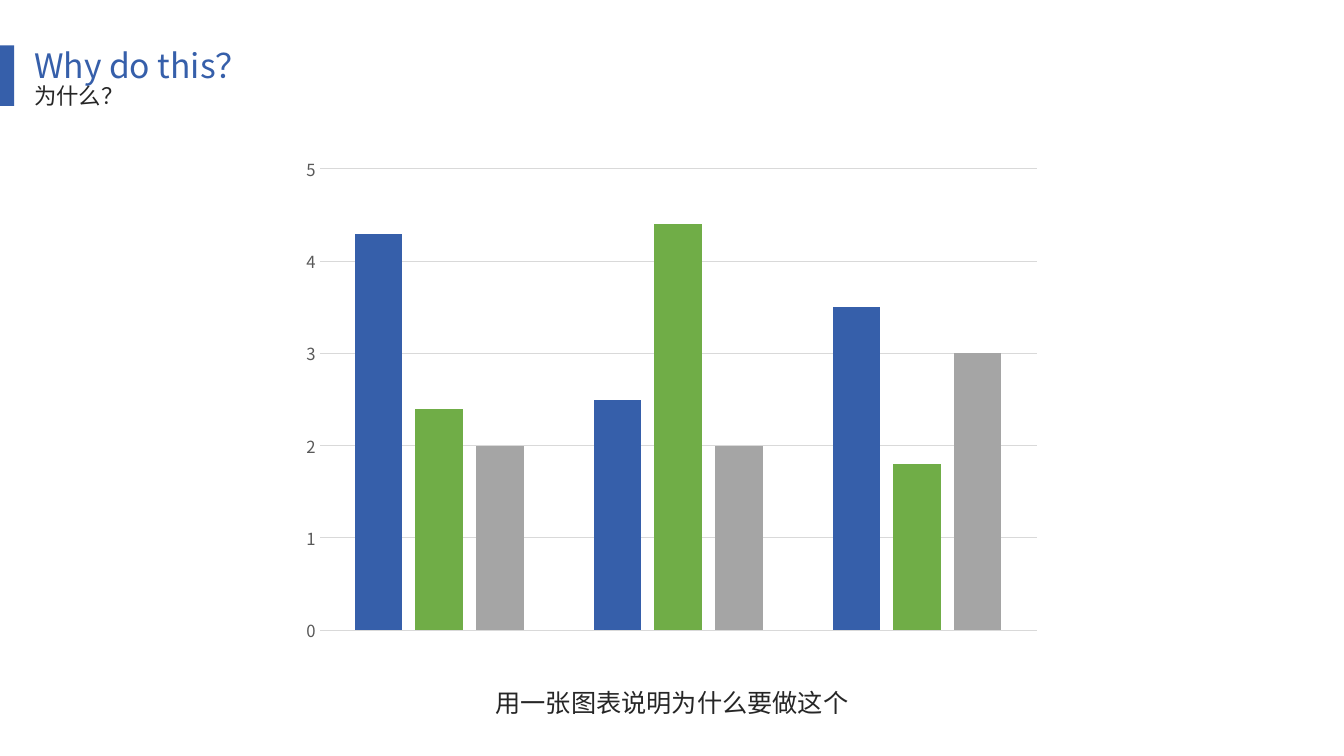
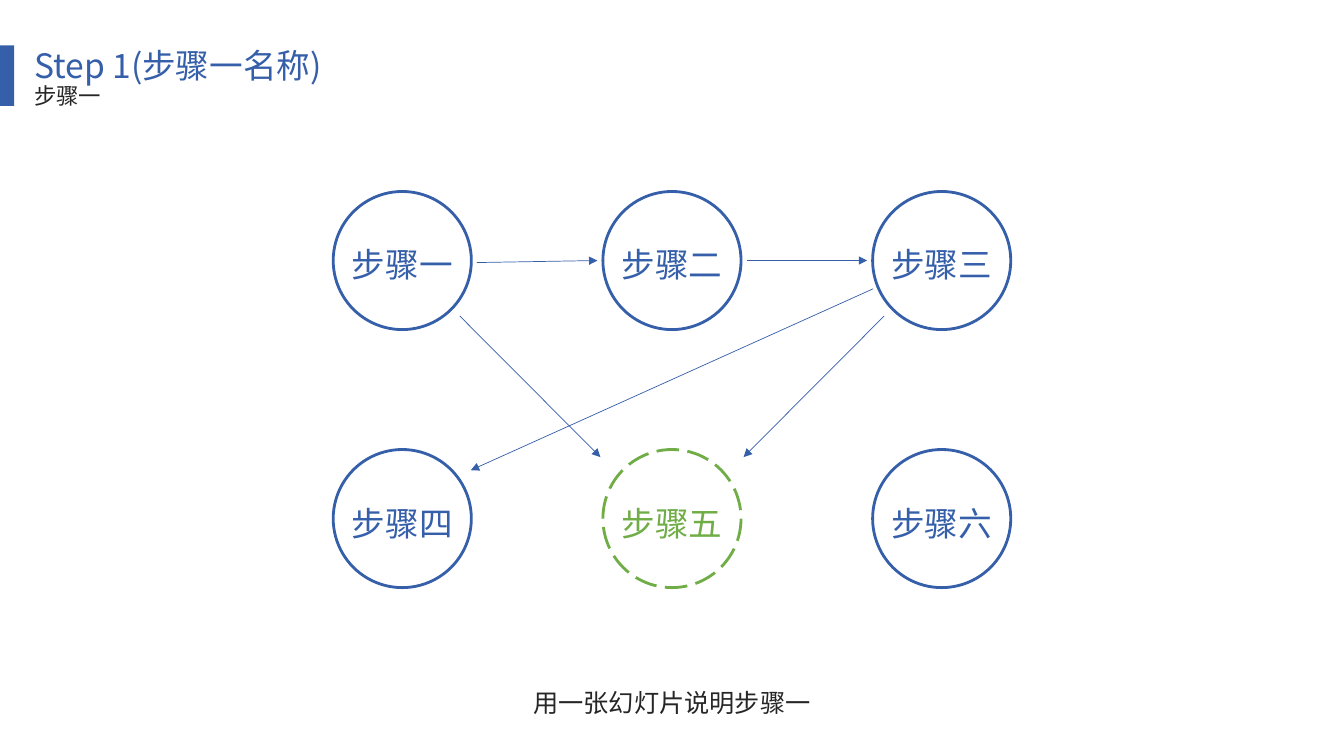
from pptx import Presentation
from pptx.chart.data import CategoryChartData
from pptx.dml.color import RGBColor
from pptx.enum.chart import XL_CHART_TYPE, XL_TICK_MARK
from pptx.enum.dml import MSO_LINE
from pptx.enum.shapes import MSO_CONNECTOR, MSO_SHAPE
from pptx.enum.text import MSO_ANCHOR, PP_ALIGN
from pptx.oxml import parse_xml
from pptx.oxml.ns import nsdecls
from pptx.util import Inches, Pt
from lxml.etree import SubElement
from pptx.oxml.ns import qn

# Shared style
WIDE, HIGH = 13.33, 7.5
FONT = "Noto Sans CJK SC"
HEX = {"blue": "365FAA", "green": "70AD47", "gray": "A5A5A5",
       "ink": "262626", "label": "595959", "grid": "D9D9D9"}

# Content
WHY = {"title": "Why do this？", "sub": "为什么？",
       "note": "用一张图表说明为什么要做这个"}
STEP = {"title": "Step 1(步骤一名称)", "sub": "步骤一",
        "note": "用一张幻灯片说明步骤一"}
CATS = ["1", "2", "3"]
BARS = [("Series 1", (4.3, 2.5, 3.5), "blue"),
        ("Series 2", (2.4, 4.4, 1.8), "green"),
        ("Series 3", (2, 2, 3), "gray")]
PLOT = {"x": 0.036, "y": 0.045, "w": 0.943, "h": 0.91}
STEPS = ["步骤一", "步骤二", "步骤三", "步骤四", "步骤五", "步骤六"]
FOCUS = 4
# Arrows: from step, to step, offset from each step's centre
LINKS = [(0, 4, (0.57, 0.55), (-0.71, -0.61)),
         (2, 4, (-0.57, 0.55), (0.71, -0.61)),
         (0, 1, (0.74, 0.02), (-0.74, 0)),
         (1, 2, (0.74, 0), (-0.74, 0)),
         (2, 3, (-0.68, 0.28), (0.68, -0.48))]

# Circle grid
COLS, SIZE = 3, 1.37
STEP_X, STEP_Y, TOP = 2.675, 2.56, 2.585


def rgb(name):
    return RGBColor.from_string(HEX[name])


def style(font, size, tone):
    font.name, font.size = FONT, Pt(size)
    font.color.rgb = rgb(tone)


def write(shape, text, size, tone, align=PP_ALIGN.LEFT, lead=None):
    para = shape.text_frame.paragraphs[0]
    para.text = text
    para.alignment = align
    if lead:
        para.line_spacing = lead
    run = para.runs[0]
    style(run.font, size, tone)
    SubElement(run.font._element, qn("a:ea")).set("typeface", FONT)


def add_text(slide, box, *args, **kw):
    shape = slide.shapes.add_textbox(*map(Inches, box))
    frame = shape.text_frame
    frame.word_wrap = True
    frame.vertical_anchor = MSO_ANCHOR.BOTTOM
    write(shape, *args, **kw)


def add_page(deck, page):
    slide = deck.slides.add_slide(deck.slide_layouts[6])
    band = slide.shapes.add_shape(
        MSO_SHAPE.RECTANGLE, 0, Inches(0.45), Inches(0.14), Inches(0.6))
    band.shadow.inherit = False
    band.fill.solid()
    band.fill.fore_color.rgb = rgb("blue")
    band.line.fill.background()
    add_text(slide, (0.24, 0.43, 7.17, 0.46), page["title"], 24, "blue", lead=0.8)
    add_text(slide, (0.24, 0.78, 7.17, 0.35), page["sub"], 16, "ink", lead=0.9)
    add_text(slide, (WIDE / 2 - 2, 6.77, 4, 0.4), page["note"], 18, "ink",
             align=PP_ALIGN.CENTER)
    return slide


def add_bars(slide):
    data = CategoryChartData()
    data.categories = CATS
    for name, vals, _ in BARS:
        data.add_series(name, vals)
    chart = slide.shapes.add_chart(
        XL_CHART_TYPE.COLUMN_CLUSTERED,
        *map(Inches, (2.9, 1.45, 7.54, 5.03)), data).chart
    chart.has_legend = chart.has_title = False
    style(chart.font, 12, "label")
    plot = chart.plots[0]
    plot.gap_width, plot.overlap = 147, -27
    plot.vary_by_categories = False
    for bar, (_, _, tone) in zip(plot.series, BARS):
        bar.format.fill.solid()
        bar.format.fill.fore_color.rgb = rgb(tone)
    # Axes
    chart.category_axis.visible = False
    axis = chart.value_axis
    axis.minimum_scale, axis.maximum_scale, axis.major_unit = 0, 5, 1
    axis.major_tick_mark = axis.minor_tick_mark = XL_TICK_MARK.NONE
    axis.format.line.fill.background()
    style(axis.tick_labels.font, 11.9, "label")
    grid = axis.major_gridlines.format.line
    grid.color.rgb, grid.width = rgb("grid"), Pt(0.75)
    # Inner plot area, as shares of the chart
    parts = "".join(f'<c:{key} val="{val}"/>' for key, val in PLOT.items())
    area = chart._chartSpace.chart.plotArea
    for old in area.findall(qn("c:layout")):
        area.remove(old)
    area.insert(0, parse_xml(
        f'<c:layout {nsdecls("c")}><c:manualLayout>'
        '<c:layoutTarget val="inner"/><c:xMode val="edge"/>'
        f'<c:yMode val="edge"/>{parts}</c:manualLayout></c:layout>'))


def centre(num):
    row, col = divmod(num, COLS)
    return WIDE / 2 + (col - 1) * STEP_X, TOP + row * STEP_Y


def add_step(slide, num, name):
    x, y = centre(num)
    tone = "green" if num == FOCUS else "blue"
    ring = slide.shapes.add_shape(
        MSO_SHAPE.OVAL, *map(Inches, (x - SIZE / 2, y - SIZE / 2, SIZE, SIZE)))
    ring.shadow.inherit = False
    ring.fill.background()
    ring.line.color.rgb, ring.line.width = rgb(tone), Pt(2)
    if num == FOCUS:
        ring.line.dash_style = MSO_LINE.LONG_DASH
    frame = ring.text_frame
    frame.word_wrap = False
    frame.vertical_anchor = MSO_ANCHOR.MIDDLE
    frame.margin_top, frame.margin_bottom = Inches(0.08), 0
    write(ring, name, 24, tone, align=PP_ALIGN.CENTER)


def add_link(slide, start, end, shift, stop):
    ends = [mid + off for num, move in ((start, shift), (end, stop))
            for mid, off in zip(centre(num), move)]
    link = slide.shapes.add_connector(
        MSO_CONNECTOR.STRAIGHT, *map(Inches, ends))
    link.line.color.rgb, link.line.width = rgb("blue"), Pt(0.5)
    SubElement(link.line._get_or_add_ln(), qn("a:tailEnd")).set("type", "triangle")
    SubElement(link._element.spPr, qn("a:effectLst"))


def main():
    deck = Presentation()
    deck.slide_width, deck.slide_height = Inches(WIDE), Inches(HIGH)
    add_bars(add_page(deck, WHY))
    slide = add_page(deck, STEP)
    for num, name in enumerate(STEPS):
        add_step(slide, num, name)
    for link in LINKS:
        add_link(slide, *link)
    deck.save("out.pptx")


if __name__ == "__main__":
    main()
